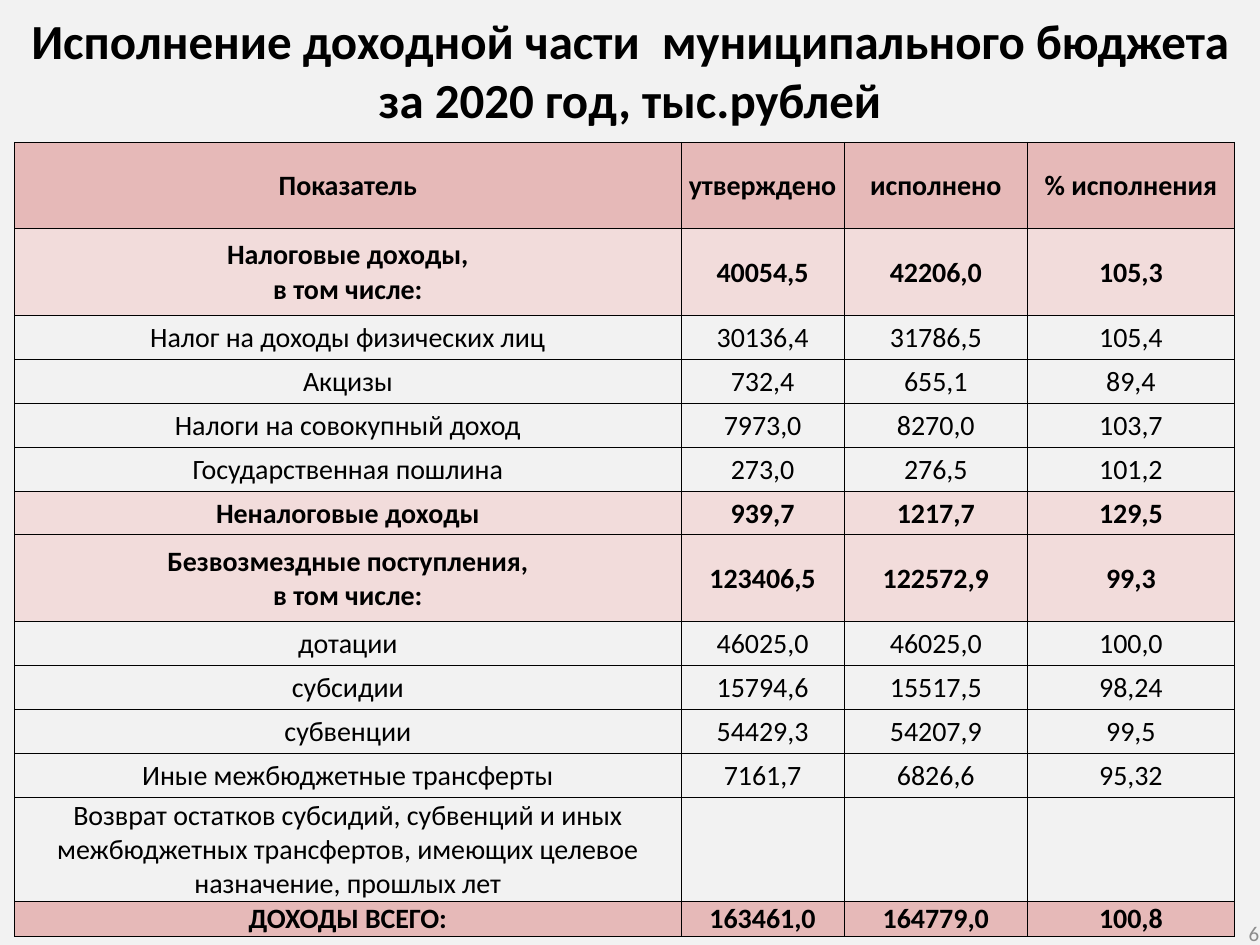
"""Build the slide on execution of the municipal budget's revenue for 2020."""
import lxml.etree
import pptx
import pptx.dml.color
import pptx.enum.text
import pptx.oxml
import pptx.oxml.ns
import pptx.util

Pt = pptx.util.Pt
ALIGN = pptx.enum.text.PP_ALIGN
ANCHOR = pptx.enum.text.MSO_ANCHOR

FONT = "Calibri"
BLACK = "000000"
TOTAL = "E6B9B8"
GROUP = "F2DCDB"
DETAIL = None

COLUMN_WIDTHS = (381, 93, 105, 118)
HEADING, SINGLE, TRIPLE, LAST = 49.4, 25.14, 58.2, 20

REVENUE = [
    (TOTAL, HEADING, "Показатель", "утверждено", "исполнено", "% исполнения"),
    (GROUP, HEADING, "Налоговые доходы,\nв том числе:", "40054,5", "42206,0", "105,3"),
    (DETAIL, SINGLE, "Налог на доходы физических лиц", "30136,4", "31786,5", "105,4"),
    (DETAIL, SINGLE, "Акцизы", "732,4", "655,1", "89,4"),
    (DETAIL, SINGLE, "Налоги на совокупный доход", "7973,0", "8270,0", "103,7"),
    (DETAIL, SINGLE, "Государственная пошлина", "273,0", "276,5", "101,2"),
    (GROUP, SINGLE, "Неналоговые доходы", "939,7", "1217,7", "129,5"),
    (GROUP, HEADING, "Безвозмездные поступления,\nв том числе:",
     "123406,5", "122572,9", "99,3"),
    (DETAIL, SINGLE, "дотации", "46025,0", "46025,0", "100,0"),
    (DETAIL, SINGLE, "субсидии", "15794,6", "15517,5", "98,24"),
    (DETAIL, SINGLE, "субвенции", "54429,3", "54207,9", "99,5"),
    (DETAIL, SINGLE, "Иные межбюджетные трансферты", "7161,7", "6826,6", "95,32"),
    (DETAIL, TRIPLE, "Возврат остатков субсидий, субвенций и иных межбюджетных "
     "трансфертов, имеющих целевое назначение, прошлых лет", "", "", ""),
    (TOTAL, LAST, "ДОХОДЫ ВСЕГО:", "163461,0", "164779,0", "100,8"),
]


def rgb(value):
    """Turn a hex string into a colour."""
    return pptx.dml.color.RGBColor.from_string(value)


def write(frame, text, size=16, color=BLACK, bold=False, align=ALIGN.CENTER):
    """Fill a text frame, one paragraph per line, in a single format."""
    frame.word_wrap = True
    frame.text = text
    for paragraph in frame.paragraphs:
        paragraph.alignment = align
        for run in paragraph.runs:
            run.font.name = FONT
            run.font.size = Pt(size)
            run.font.bold = bold
            run.font.color.rgb = rgb(color)


def set_margins(holder, left, top, right, bottom):
    """Set the inner margins of a text frame or a cell."""
    holder.margin_left, holder.margin_top = Pt(left), Pt(top)
    holder.margin_right, holder.margin_bottom = Pt(right), Pt(bottom)


def place(shape, left, top, width, height):
    """Move and size a shape."""
    shape.left, shape.top = Pt(left), Pt(top)
    shape.width, shape.height = Pt(width), Pt(height)


def add_borders(cell, color=BLACK, width=0.5):
    """Draw a thin line on all four sides of a cell."""
    properties = cell._tc.get_or_add_tcPr()
    for position, side in enumerate(("lnL", "lnR", "lnT", "lnB")):
        line = lxml.etree.Element(pptx.oxml.ns.qn(f"a:{side}"), w=str(Pt(width)))
        fill = lxml.etree.SubElement(line, pptx.oxml.ns.qn("a:solidFill"))
        lxml.etree.SubElement(fill, pptx.oxml.ns.qn("a:srgbClr"), val=color)
        properties.insert(position, line)


def format_cell(cell, text, fill):
    """Write one table cell; filled rows are bold."""
    write(cell.text_frame, text, bold=fill is not None)
    set_margins(cell, 0.7, 0.7, 0.7, 0)
    cell.vertical_anchor = ANCHOR.MIDDLE
    if fill:
        cell.fill.solid()
        cell.fill.fore_color.rgb = rgb(fill)
    else:
        cell.fill.background()
    add_borders(cell)


def add_title(slide, text):
    """Place and write the slide title."""
    title = slide.shapes.title
    place(title, 0, 0, 720, 77)
    frame = title.text_frame
    write(frame, text, size=28, bold=True)
    set_margins(frame, 7.2, 5.8, 7.2, 3.6)
    frame.vertical_anchor = ANCHOR.TOP
    frame.auto_size = pptx.enum.text.MSO_AUTO_SIZE.NONE


def add_revenue_table(slide):
    """Add the table of approved and received revenue."""
    heights = [row[1] for row in REVENUE]
    table = slide.shapes.add_table(
        len(REVENUE), len(COLUMN_WIDTHS), Pt(8.3), Pt(81.3),
        Pt(sum(COLUMN_WIDTHS)), Pt(sum(heights))).table
    table.first_row = table.horz_banding = False
    for column, width in zip(table.columns, COLUMN_WIDTHS):
        column.width = Pt(width)
    for row, (fill, height, *texts) in zip(table.rows, REVENUE):
        row.height = Pt(height)
        for cell, text in zip(row.cells, texts):
            format_cell(cell, text, fill)


def add_page_number(slide, number):
    """Add the page number in the lower right corner."""
    box = slide.shapes.add_textbox(Pt(551.5), Pt(525.6), Pt(168), Pt(15))
    frame = box.text_frame
    write(frame, number, size=12, color="8C8C8C", align=ALIGN.RIGHT)
    set_margins(frame, 0, 0, 0, 0)
    frame.vertical_anchor = ANCHOR.MIDDLE


def main():
    """Build and save the presentation."""
    presentation = pptx.Presentation()
    presentation.slide_width, presentation.slide_height = Pt(720), Pt(540)
    slide = presentation.slides.add_slide(presentation.slide_layouts[5])
    slide.background.fill.solid()
    slide.background.fill.fore_color.rgb = rgb("F2F2F2")
    add_title(slide, "Исполнение доходной части  муниципального бюджета\n"
                     "за 2020 год, тыс.рублей")
    add_revenue_table(slide)
    add_page_number(slide, "6")
    presentation.save("out.pptx")


if __name__ == "__main__":
    main()
